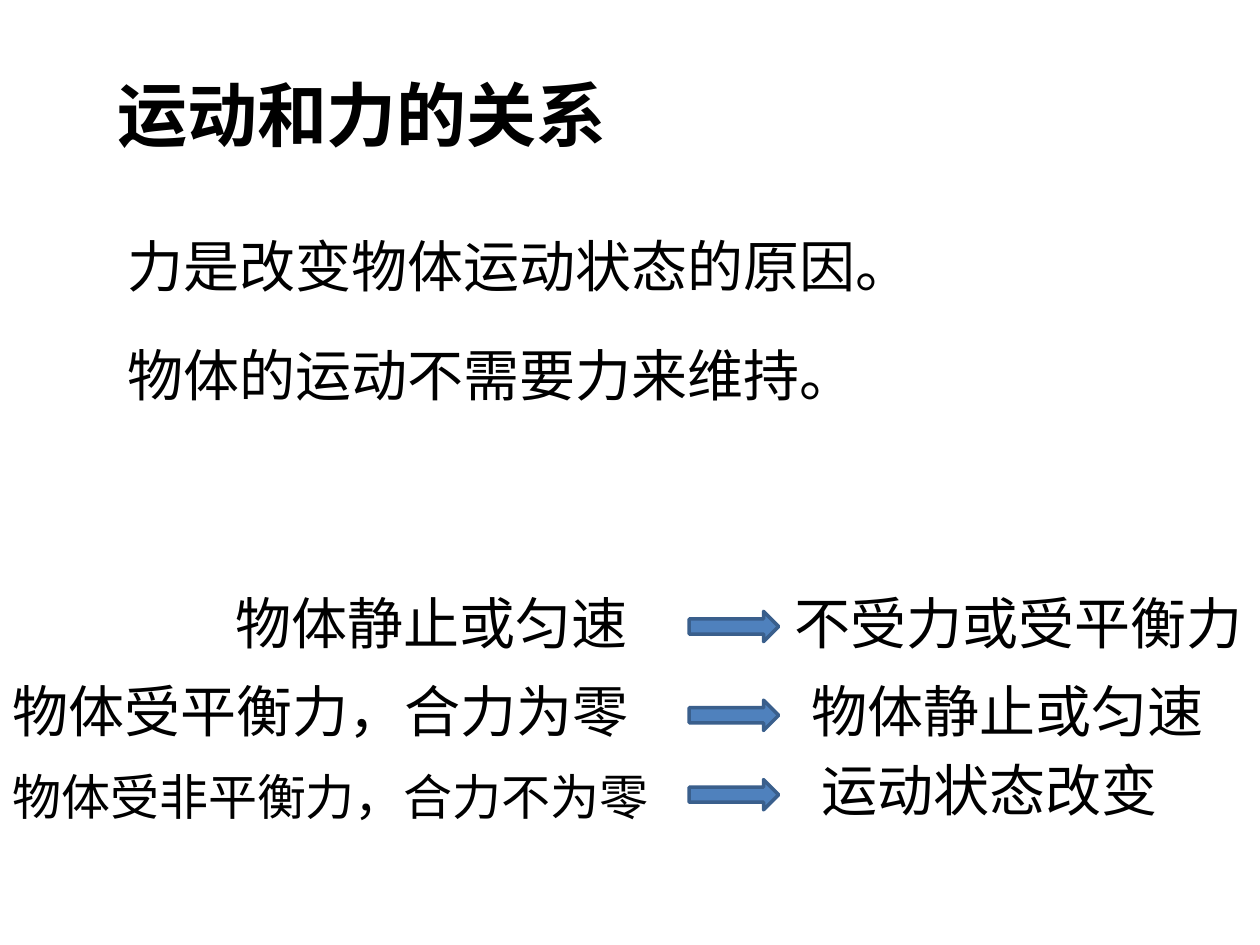
"""Build a slide on the relation between motion and force."""
from pptx import Presentation
from pptx.dml.color import RGBColor
from pptx.enum.shapes import MSO_SHAPE as SHAPE
from pptx.enum.text import MSO_ANCHOR as ANCHOR, MSO_AUTO_SIZE as AUTO, PP_ALIGN as ALIGN
from pptx.oxml.xmlchemy import OxmlElement
from pptx.util import Inches, Pt

BLACK = RGBColor(0x00, 0x00, 0x00)
BLUE = RGBColor(0x4F, 0x81, 0xBD)
EDGE = RGBColor(0x3A, 0x5F, 0x8C)
BODY_FONT = "Calibri"
TITLE_FONT = "Noto Sans CJK SC"
WIDTH, HEIGHT = Inches(10), Inches(7.5)
ARROW_LEFT, ARROW_W, ARROW_H = 0.547, 0.071, 0.032
LINE_H = 0.085

STATEMENTS = ["力是改变物体运动状态的原因。", "物体的运动不需要力来维持。"]
RELATIONS = [
    (0.616, 0.616, 0.663, ("物体静止或匀速", 0.177, 32), ("不受力或受平衡力", 0.621)),
    (0.709, 0.709, 0.757, ("物体受平衡力，合力为零", 0, 32), ("物体静止或匀速", 0.634)),
    (0.804, 0.793, 0.841, ("物体受非平衡力，合力不为零", 0, 28), ("运动状态改变", 0.642)),
]


def write(p, text, size=32, font=BODY_FONT, bold=False, after=0):
    p.alignment = ALIGN.LEFT
    p.space_before, p.space_after = Pt(0), Pt(after)
    r = p.add_run()
    r.text = text
    r.font.name, r.font.size, r.font.bold = font, Pt(size), bold
    r.font.color.rgb = BLACK
    ea = OxmlElement("a:ea")
    ea.set("typeface", font)
    r.font._element.find("{*}latin").addnext(ea)


class Deck:
    """Style and current slide, with lengths as shares of the slide's size."""

    def __init__(self):
        self.prs = Presentation()
        self.prs.slide_width, self.prs.slide_height = WIDTH, HEIGHT
        self.s = self.prs.slides.add_slide(self.prs.slide_layouts[1])

    def box(self, x, y, w, h):
        return int(x * WIDTH), int(y * HEIGHT), int(w * WIDTH), int(h * HEIGHT)

    def frame(self, sp, wrap=False):
        tf = sp.text_frame
        tf.word_wrap, tf.auto_size = wrap, AUTO.NONE
        tf.vertical_anchor = ANCHOR.MIDDLE
        return tf

    def title(self, text, *area):
        sp = self.s.shapes.title
        sp.left, sp.top, sp.width, sp.height = self.box(*area)
        write(self.frame(sp).paragraphs[0], text, size=40, font=TITLE_FONT, bold=True)

    def body(self, lines, *area, gap=24):
        sp = self.s.placeholders[1]
        sp.left, sp.top, sp.width, sp.height = self.box(*area)
        tf = self.frame(sp, wrap=True)
        for i, line in enumerate(lines):
            p = tf.paragraphs[0] if i == 0 else tf.add_paragraph()
            write(p, line, after=gap if i < len(lines) - 1 else 0)
            pPr = p._p.get_or_add_pPr()
            pPr.set("marL", "0")
            pPr.set("indent", "0")
            pPr.append(OxmlElement("a:buNone"))

    def text(self, text, *area, size=32):
        sp = self.s.shapes.add_textbox(*self.box(*area))
        write(self.frame(sp).paragraphs[0], text, size=size)

    def arrow(self, *area):
        sp = self.s.shapes.add_shape(SHAPE.RIGHT_ARROW, *self.box(*area))
        sp.shadow.inherit = False
        sp.fill.solid()
        sp.fill.fore_color.rgb = BLUE
        sp.line.color.rgb, sp.line.width = EDGE, Pt(2)


def main():
    deck = Deck()
    deck.title("运动和力的关系", 0.083, 0.069, 0.414, 0.103)
    deck.body(STATEMENTS, 0.091, 0.237, 0.65, 0.202)
    for left_y, right_y, mid, (cause, x, size), (effect, right_x) in RELATIONS:
        left_h = LINE_H if size == 32 else 0.076
        deck.text(cause, x, left_y, 0.531 - x, left_h, size=size)
        deck.text(effect, right_x, right_y, 1 - right_x, LINE_H)
        deck.arrow(ARROW_LEFT, mid - ARROW_H / 2, ARROW_W, ARROW_H)
    deck.prs.save("out.pptx")


if __name__ == "__main__":
    main()
